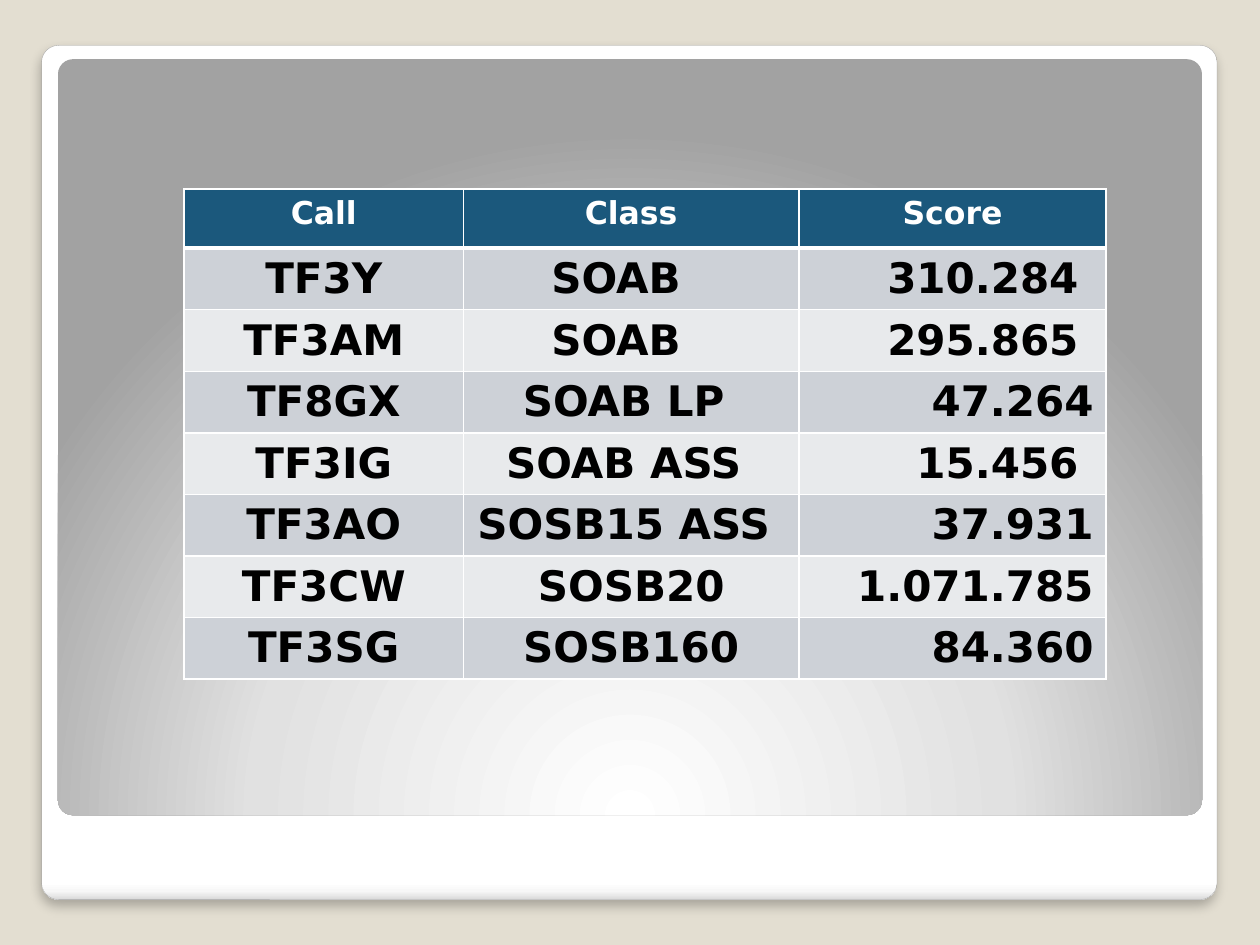
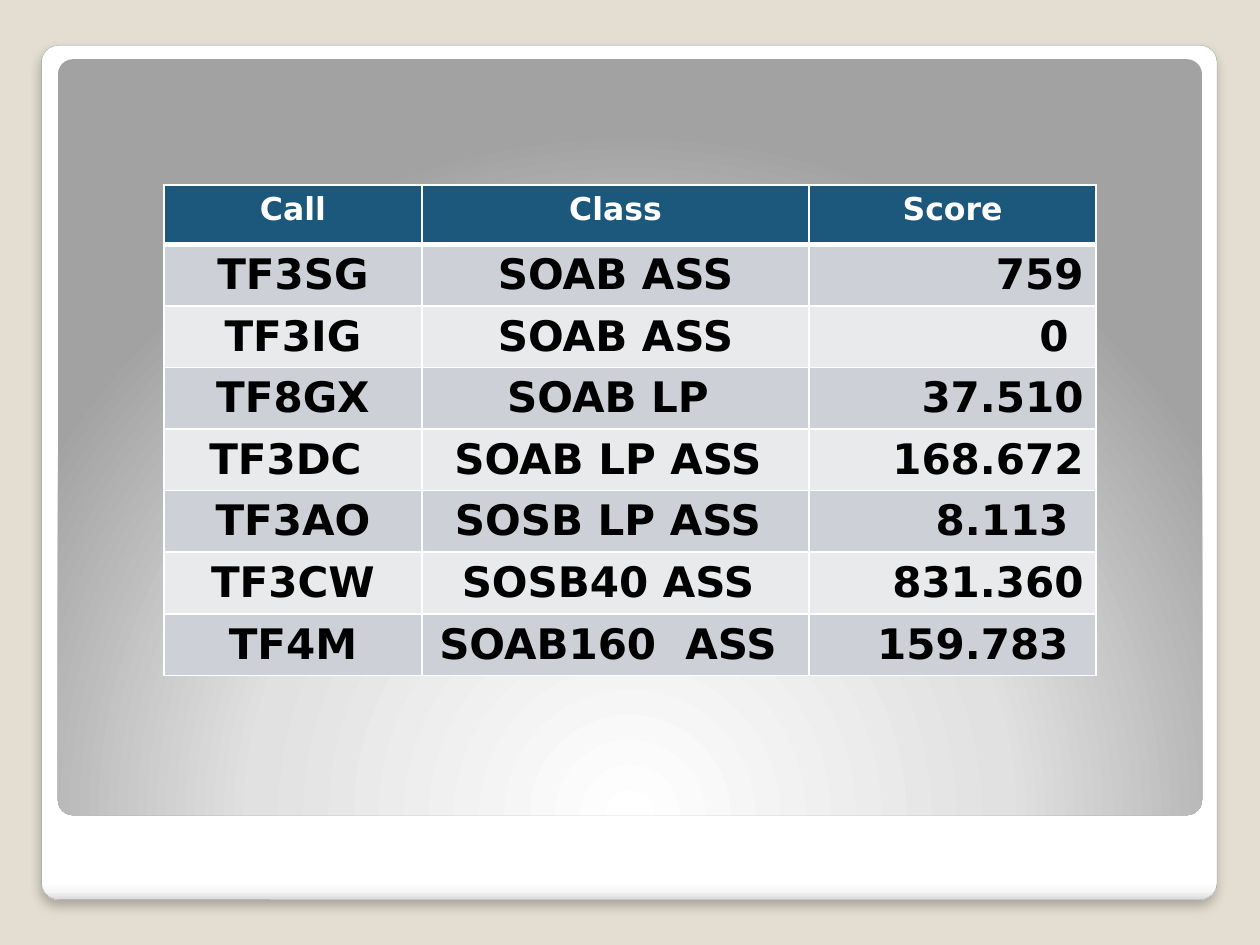
"""Two contest result tables on a shared framed background."""
from lxml.etree import SubElement
from pptx import Presentation
from pptx.dml.color import RGBColor
from pptx.enum.shapes import MSO_SHAPE as Shape
from pptx.enum.text import PP_ALIGN as Align
from pptx.oxml import parse_xml
from pptx.oxml.ns import qn
from pptx.util import Inches, Pt

SAND = RGBColor(0xE3, 0xDE, 0xD1)
WHITE = RGBColor(0xFF, 0xFF, 0xFF)
BLACK = RGBColor(0, 0, 0)
NAVY = RGBColor(0x1B, 0x58, 0x7C)
BAND_DARK = RGBColor(0xCD, 0xD1, 0xD7)
BAND_LIGHT = RGBColor(0xE8, 0xEA, 0xEC)
FRAME_EDGE = RGBColor(0xA4, 0xA4, 0xA4)
FRAME_STOPS = (
    (0, WHITE), (98, WHITE),
    (99, RGBColor(0xF7, 0xF7, 0xF7)), (100, RGBColor(0xDA, 0xDA, 0xDA)),
)
PANEL_STOPS = (
    (0, WHITE), (55, RGBColor(0xE1, 0xE1, 0xE1)), (100, RGBColor(0xA2, 0xA2, 0xA2)),
)
DOWNWARD = '<a:lin ang="5400000" scaled="0"/>'
FROM_BELOW = ('<a:path path="circle"><a:fillToRect l="50000" t="175000" '
              'r="50000" b="-75000"/></a:path>')
DRAWING_NS = 'xmlns:a="http://schemas.openxmlformats.org/drawingml/2006/main"'

GRID_COLUMNS, GRID_ROWS = 100, 75
HEADINGS = ("Call", "Class", "Score")
ALIGNMENTS = (Align.CENTER, Align.CENTER, Align.RIGHT)
HEADER_FONT = {"name": "DejaVu Sans", "size": Pt(18), "bold": True}
BODY_FONT = {**HEADER_FONT, "size": Pt(24)}
HEADER_HEIGHT, BODY_HEIGHT = 4.7, 4.8
CELL_MARGIN, TRAILING_GAP = 0.1, 0.12
THIN, THICK = Pt(1), Pt(3)

FIRST_RESULTS = (
    ("TF3Y", "SOAB", "310.284", (0, 2, 1)),
    ("TF3AM", "SOAB", "295.865", (0, 2, 1)),
    ("TF8GX", "SOAB LP", "47.264", (0, 1, 0)),
    ("TF3IG", "SOAB ASS", "15.456", (0, 1, 1)),
    ("TF3AO", "SOSB15 ASS", "37.931", (0, 1, 0)),
    ("TF3CW", "SOSB20", "1.071.785", (0, 0, 0)),
    ("TF3SG", "SOSB160", "84.360", (0, 0, 0)),
)
SECOND_RESULTS = (
    ("TF3SG", "SOAB ASS", "759", (0, 0, 0)),
    ("TF3IG", "SOAB ASS", "0", (0, 0, 1)),
    ("TF8GX", "SOAB LP", "37.510", (0, 1, 0)),
    ("TF3DC", "SOAB LP ASS", "168.672", (1, 1, 0)),
    ("TF3AO", "SOSB LP ASS", "8.113", (0, 1, 1)),
    ("TF3CW", "SOSB40 ASS", "831.360", (0, 1, 0)),
    ("TF4M", "SOAB160  ASS", "159.783", (0, 1, 1)),
)


class ResultDeck:
    """Hold the shared style and the current slide."""

    def __init__(self):
        """Start a 4:3 presentation."""
        self.deck = Presentation()
        self.deck.slide_width, self.deck.slide_height = Inches(10), Inches(7.5)
        self.slide = None

    def across(self, columns):
        """Turn grid columns into a length."""
        return round(self.deck.slide_width * columns / GRID_COLUMNS)

    def down(self, rows):
        """Turn grid rows into a length."""
        return round(self.deck.slide_height * rows / GRID_ROWS)

    def new_slide(self):
        """Add a blank slide with the frame and the panel."""
        self.slide = self.deck.slides.add_slide(self.deck.slide_layouts[6])
        backdrop = self.slide.background.fill
        backdrop.solid()
        backdrop.fore_color.rgb = SAND
        frame = self.rounded(3.3, 3.6, 93.3, 67.8, FRAME_STOPS, DOWNWARD)
        frame.line.color.rgb = FRAME_EDGE
        frame.line.width = Pt(0.16)
        self.cast_shadow(frame)
        panel = self.rounded(4.6, 4.7, 90.8, 60, PANEL_STOPS, FROM_BELOW)
        panel.line.fill.background()

    def rounded(self, left, top, width, height, stops, direction):
        """Draw a rounded rectangle filled with a gradient."""
        card = self.slide.shapes.add_shape(
            Shape.ROUNDED_RECTANGLE, self.across(left), self.down(top),
            self.across(width), self.down(height))
        card.adjustments[0] = 0.02
        card.shadow.inherit = False
        card.fill.gradient()
        properties = card.element.spPr
        marks = "".join(f'<a:gs pos="{share * 1000}"><a:srgbClr val="{color}"/></a:gs>'
                        for share, color in stops)
        gradient = parse_xml(f'<a:gradFill {DRAWING_NS} rotWithShape="1">'
                             f'<a:gsLst>{marks}</a:gsLst>{direction}</a:gradFill>')
        properties.replace(properties.find(qn("a:gradFill")), gradient)
        return card

    def cast_shadow(self, card):
        """Give a shape a soft shadow below it."""
        effects = card.element.spPr.find(qn("a:effectLst"))
        effects.append(parse_xml(
            f'<a:outerShdw {DRAWING_NS} blurRad="{Pt(6)}" dist="{Pt(4)}" dir="5400000" '
            f'rotWithShape="0"><a:srgbClr val="{BLACK}"><a:alpha val="25000"/>'
            '</a:srgbClr></a:outerShdw>'))

    def results(self, left, top, widths, entries):
        """Add a result table with a header and banded rows."""
        height = HEADER_HEIGHT + BODY_HEIGHT * len(entries)
        table = self.slide.shapes.add_table(
            len(entries) + 1, len(widths), self.across(left), self.down(top),
            self.across(sum(widths)), self.down(height)).table
        for column, width in zip(table.columns, widths):
            column.width = self.across(width)
        for number, (*texts, gaps) in enumerate(((*HEADINGS, (0, 0, 0)), *entries)):
            header = number == 0
            table.rows[number].height = self.down(HEADER_HEIGHT if header else BODY_HEIGHT)
            band = NAVY if header else BAND_DARK if number % 2 else BAND_LIGHT
            borders = {"L": THIN, "R": THIN, "T": THICK if number == 1 else THIN,
                       "B": THICK if header else THIN}
            for place, (text, gap) in enumerate(zip(texts, gaps)):
                cell = table.cell(number, place)
                cell.margin_right = Inches(CELL_MARGIN + TRAILING_GAP * gap)
                self.label(cell, text, Align.CENTER if header else ALIGNMENTS[place],
                           HEADER_FONT if header else BODY_FONT, WHITE if header else BLACK)
                self.outline(cell, borders)
                cell.fill.solid()
                cell.fill.fore_color.rgb = band

    def label(self, cell, text, alignment, font_values, color):
        """Put formatted text into a cell."""
        paragraph = cell.text_frame.paragraphs[0]
        paragraph.alignment = alignment
        run = paragraph.add_run()
        run.text = text
        for name, value in font_values.items():
            setattr(run.font, name, value)
        run.font.color.rgb = color

    def outline(self, cell, borders):
        """Draw white borders of the given widths."""
        properties = cell._tc.get_or_add_tcPr()
        for side, width in borders.items():
            edge = SubElement(properties, qn(f"a:ln{side}"), w=str(int(width)))
            SubElement(SubElement(edge, qn("a:solidFill")), qn("a:srgbClr"), val=str(WHITE))


def main():
    """Build and save both result slides."""
    show = ResultDeck()
    for left, top, widths, entries in (
        (14.6, 15, (22.2, 26.6, 24.4), FIRST_RESULTS),
        (13, 14.7, (20.5, 30.7, 22.8), SECOND_RESULTS),
    ):
        show.new_slide()
        show.results(left, top, widths, entries)
    show.deck.save("out.pptx")


if __name__ == "__main__":
    main()
